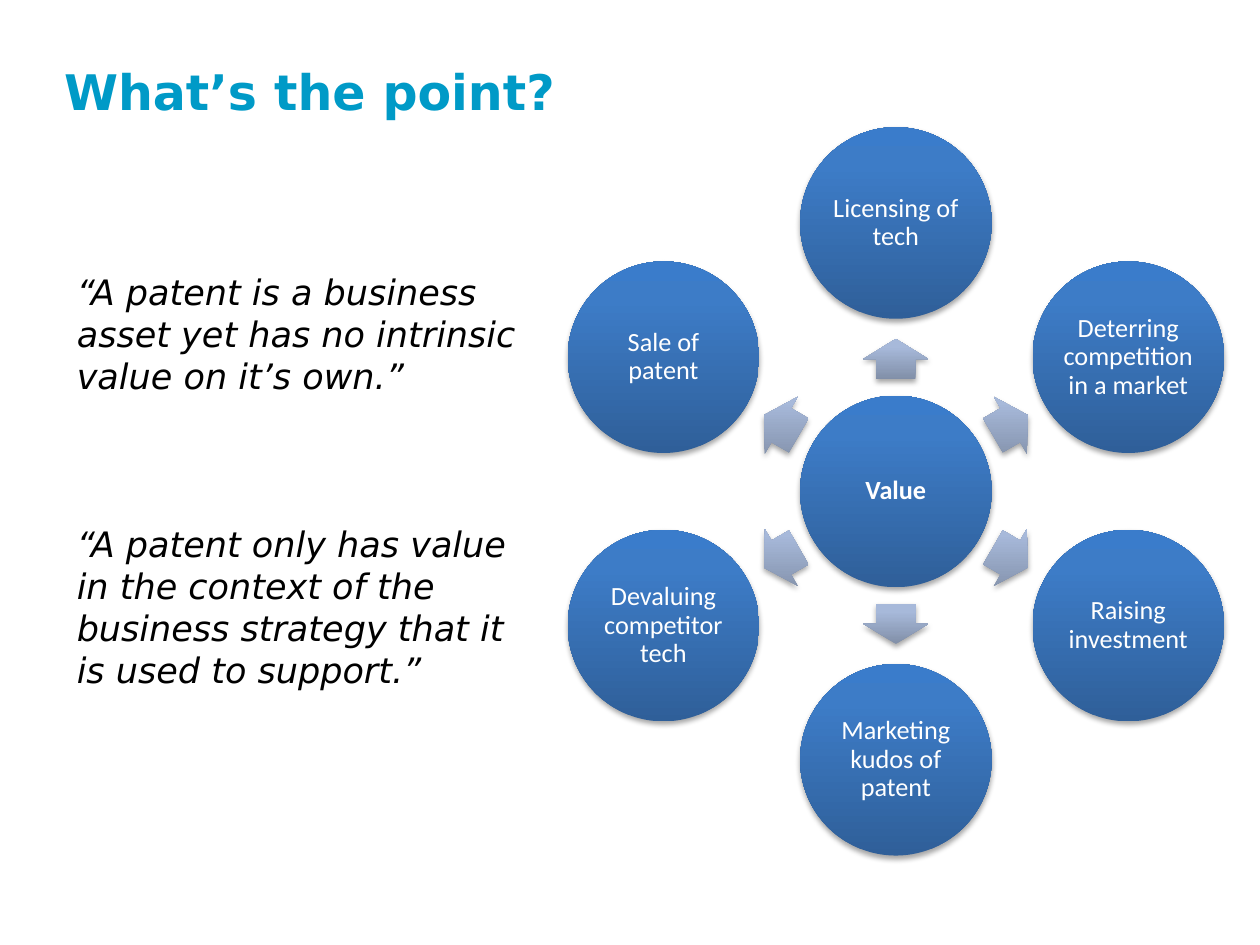
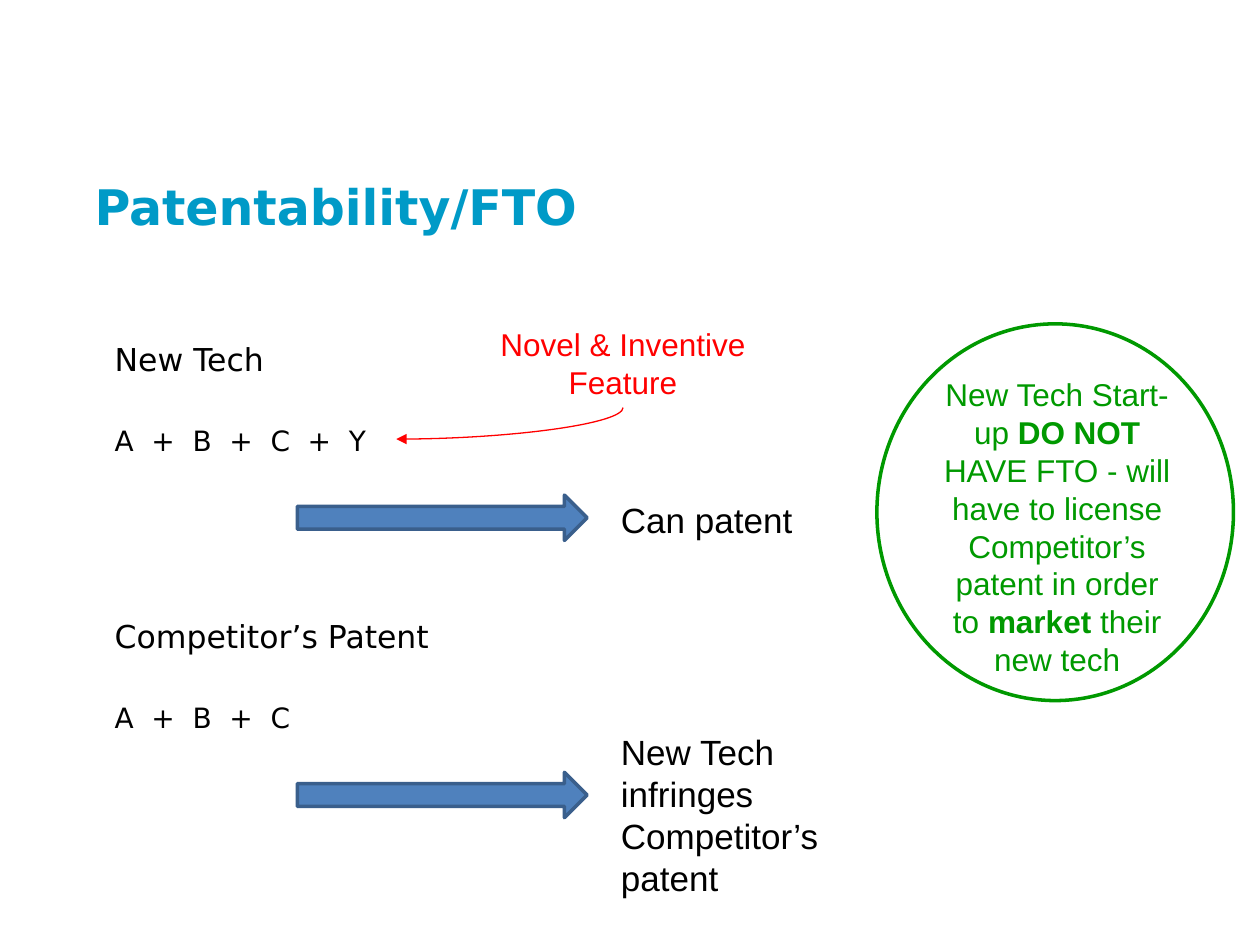
from math import cos, sin, radians
from lxml import etree
from pptx import Presentation
from pptx.dml.color import RGBColor
from pptx.enum.shapes import MSO_CONNECTOR as LINK, MSO_SHAPE as FORM
from pptx.enum.text import MSO_ANCHOR as ANCHOR, PP_ALIGN as ALIGN
from pptx.oxml import parse_xml
from pptx.oxml.ns import qn
from pptx.util import Inches, Pt

# Content
QUOTES = [
    "“A patent is a business asset yet has no intrinsic value on it’s own.”",
    "“A patent only has value in the context of the business strategy"
    " that it is used to support.”",
]
HUB = "**Value**"
SPOKES = [  # clockwise from the top
    "Licensing of tech", "Deterring competition in a market",
    "Raising investment", "Marketing kudos of patent",
    "Devaluing competitor tech", "Sale of patent",
]
CASES = [  # top, lines, outcome, outcome box
    (2.7, ["New Tech", "A  +  B  +  C  +  Y"],
     "Can patent", (4.83, 3.91, 1.66, 0.44)),
    (4.9, ["Competitor’s Patent", "A  +  B  +  C"],
     "New Tech infringes Competitor’s patent", (4.83, 5.75, 1.94, 1.45)),
]
FEATURE = "Novel & Inventive Feature"
VERDICT = ("New Tech Start-up **DO NOT **HAVE FTO - will have to license "
           "Competitor’s patent in order to **market** their new tech")

# Shared style
SANS, ARIAL, CALIBRI = "DejaVu Sans", "Arial", "Calibri"
TEAL, BLACK, WHITE = "009AC7", "000000", "FFFFFF"
GREEN, RED, BLUE, NAVY = "009900", "FF0000", "4F81BD", "3A5F8C"
DISC = [(0, "2F5F99"), (80, "3D7CC7"), (100, "3A7CCB")]
STEEL = [(0, "818FA8"), (80, "A7B9DA"), (100, "A7BADC")]
NS = 'xmlns:a="http://schemas.openxmlformats.org/drawingml/2006/main"'


def color(code):
    return RGBColor.from_string(code)


def write(shape, paras, size=18, font=ARIAL, ink=BLACK, bold=False,
          italic=False, align=ALIGN.LEFT, anchor=ANCHOR.TOP, inset=0,
          gap=0, pitch=None):
    """Fill a shape with paragraphs; **marks** switch bold on and off."""
    frame = shape.text_frame
    frame.word_wrap = True
    frame.vertical_anchor = anchor
    frame.margin_left = frame.margin_right = Inches(inset)
    frame.margin_top = frame.margin_bottom = Inches(inset / 2)
    paras = [paras] if isinstance(paras, str) else paras
    sizes = size if isinstance(size, list) else [size] * len(paras)
    for i, (line, pts) in enumerate(zip(paras, sizes)):
        para = frame.add_paragraph() if i else frame.paragraphs[0]
        para.alignment = align
        para.space_before = Pt(gap if i else 0)
        if pitch:
            para.line_spacing = pitch
        for j, part in enumerate(line.split("**")):
            if part:
                run = para.add_run()
                run.text = part
                run.font.name, run.font.size = font, Pt(pts)
                run.font.bold = bold or j % 2 == 1
                run.font.italic = italic
                run.font.color.rgb = color(ink)


def label(slide, box, paras, **style):
    write(slide.shapes.add_textbox(*map(Inches, box)), paras, **style)


def title(slide, left, top, words):
    label(slide, (left, top, 8.82, 0.55), words, size=28, font=SANS,
          ink=TEAL, bold=True)


def draw(slide, form, box, fill=None, line=None):
    shape = slide.shapes.add_shape(form, *map(Inches, box))
    shape.shadow.inherit = False
    if fill:
        shape.fill.solid()
        shape.fill.fore_color.rgb = color(fill)
    else:
        shape.fill.background()
    if line:
        shape.line.color.rgb = color(line)
        shape.line.width = Pt(2)
    else:
        shape.line.fill.background()
    return shape


def glossy(slide, form, mid, wide, high, stops):
    """A centred shape with an upright gradient and a soft shadow."""
    x, y = mid
    shape = draw(slide, form, (x - wide / 2, y - high / 2, wide, high))
    props = shape.element.spPr
    marks = "".join(f'<a:gs pos="{at * 1000}"><a:srgbClr val="{tone}"/></a:gs>'
                    for at, tone in stops)
    props.replace(props.find(qn("a:noFill")), parse_xml(
        f'<a:gradFill {NS} rotWithShape="0"><a:gsLst>{marks}</a:gsLst>'
        '<a:lin ang="16200000" scaled="0"/></a:gradFill>'))
    props.find(qn("a:effectLst")).append(parse_xml(
        f'<a:outerShdw {NS} blurRad="{Pt(3.1)}" dist="{Pt(1.8)}" dir="5400000"'
        ' rotWithShape="0"><a:srgbClr val="000000"><a:alpha val="35000"/>'
        '</a:srgbClr></a:outerShdw>'))
    return shape


def disc(slide, mid, words):
    write(glossy(slide, FORM.OVAL, mid, 1.52, 1.52, DISC), words, size=15,
          font=CALIBRI, ink=WHITE, align=ALIGN.CENTER, anchor=ANCHOR.MIDDLE,
          inset=0.02, pitch=0.9)


def polar(reach, turn):
    return (7.11 + reach * cos(radians(turn)),
            3.9 + reach * sin(radians(turn)))


def point(slide):
    title(slide, 0.51, 0.49, "What’s the point?")
    label(slide, (0.61, 2.15, 3.63, 3.5), QUOTES, size=20, font=SANS,
          italic=True, gap=72, pitch=Pt(24))
    # Hub with spokes
    disc(slide, polar(0, 0), HUB)
    for i, words in enumerate(SPOKES):
        turn = i * 360 / len(SPOKES) - 90
        arrow = glossy(slide, FORM.RIGHT_ARROW, polar(1.05, turn),
                       0.32, 0.52, STEEL)
        arrow.adjustments[0] = 0.6
        arrow.rotation = turn % 360
        disc(slide, polar(2.13, turn), words)


def freedom(slide):
    title(slide, 0.75, 1.4, "Patentability/FTO")
    # Verdict
    draw(slide, FORM.OVAL, (6.96, 2.57, 2.83, 2.99), line=GREEN)
    label(slide, (7.38, 2.93, 2.02, 2.52), VERDICT, ink=GREEN,
          align=ALIGN.CENTER, inset=0.1)
    # Novel feature and its curved pointer
    label(slide, (3.66, 2.53, 2.57, 0.71), FEATURE, ink=RED,
          align=ALIGN.CENTER, inset=0.1)
    curve = slide.shapes.add_connector(
        LINK.CURVE, *map(Inches, (3.92, 2.46, 4.17, 4.26)))
    curve.rotation = 90
    curve.line.color.rgb = color(RED)
    curve.line.width = Pt(0.75)
    props = curve.element.spPr
    props.find(qn("a:prstGeom")).set("prst", "curvedConnector2")
    etree.SubElement(props.find(qn("a:ln")), qn("a:tailEnd"), type="triangle")
    etree.SubElement(props, qn("a:effectLst"))
    # Both cases
    for top, lines, outcome, box in CASES:
        label(slide, (0.91, top, 5.69, 1.53), lines, size=[18, 16],
              font=SANS, gap=26)
        draw(slide, FORM.RIGHT_ARROW, (2.36, top + 1.23, 2.3, 0.36),
             BLUE, NAVY)
        label(slide, box, outcome, size=20, inset=0.1)


def main():
    deck = Presentation()
    deck.slide_width, deck.slide_height = Inches(10), Inches(7.5)
    for build in (point, freedom):
        build(deck.slides.add_slide(deck.slide_layouts[6]))
    deck.save("out.pptx")


if __name__ == "__main__":
    main()
